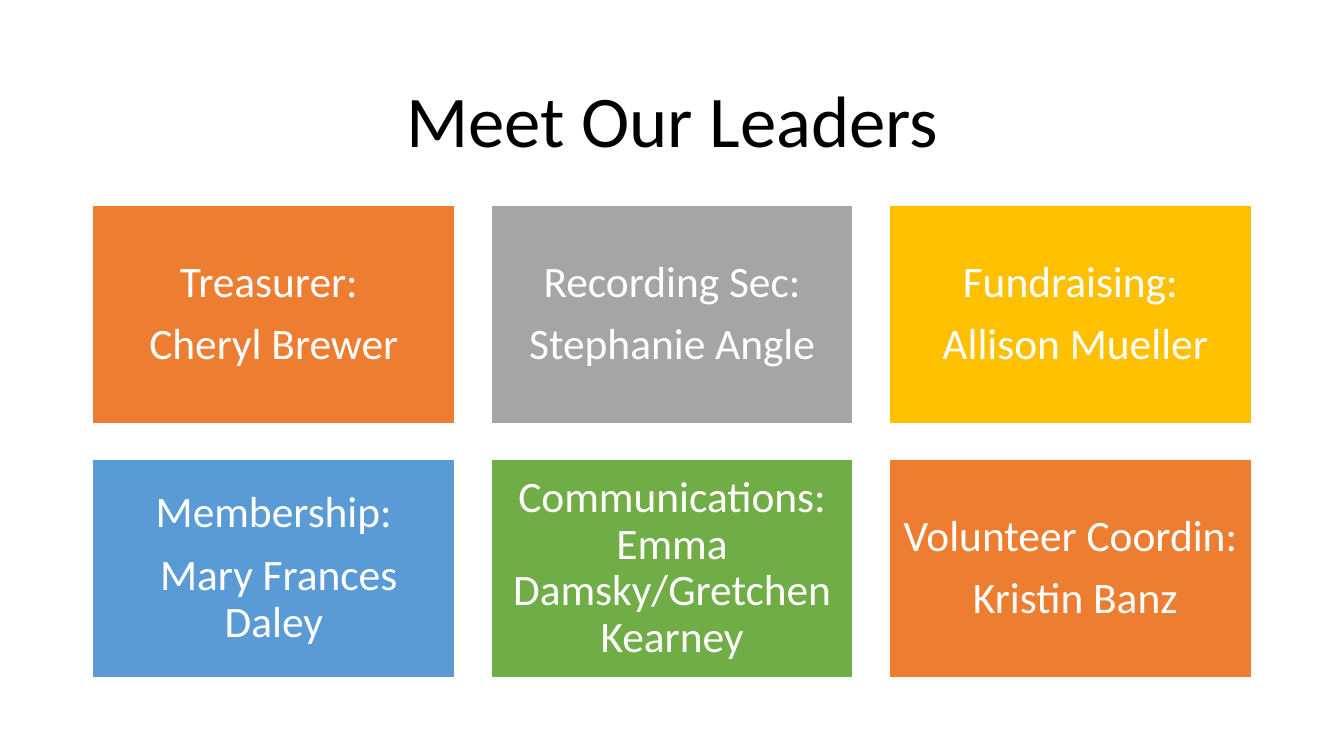
from pptx import Presentation
from pptx.dml.color import RGBColor
from pptx.enum.shapes import MSO_SHAPE
from pptx.enum.text import MSO_ANCHOR, PP_ALIGN
from pptx.util import Pt

RECTANGLE = MSO_SHAPE.RECTANGLE
MIDDLE = MSO_ANCHOR.MIDDLE
CENTER = PP_ALIGN.CENTER
EMU_PER_PX = 9144
TITLE_ONLY = 5

LEADERS = [
    ("ED7D31", ["Treasurer: ", "Cheryl Brewer"]),
    ("A5A5A5", ["Recording Sec:", "Stephanie Angle"]),
    ("FFC000", ["Fundraising:", " Allison Mueller"]),
    ("5B9BD5", ["Membership:", " Mary Frances Daley"]),
    ("70AD47", ["Communications: Emma Damsky/Gretchen Kearney"]),
    ("ED7D31", ["Volunteer Coordin:", " Kristin Banz"]),
]
COLUMNS = 3
CARD_WIDTH, CARD_HEIGHT, CARD_GAP = 359, 216, 36
GRID_LEFT, GRID_TOP = 92, 204


def px(length):
    return length * EMU_PER_PX


def color(value):
    return RGBColor.from_string(value)


class LeaderSlide:
    """Holds the style and the current slide, and adds its elements."""

    font = "Calibri"
    text_color = "FFFFFF"
    title_color = "000000"
    title_size = 52
    card_size = 31
    card_inset = 13
    card_spacing = 11

    def __init__(self, presentation):
        self.slide = presentation.slides.add_slide(presentation.slide_layouts[TITLE_ONLY])

    def fill_text(self, frame, lines, size, text_color, inset, spacing=0):
        frame.word_wrap = True
        frame.vertical_anchor = MIDDLE
        frame.margin_left = frame.margin_right = px(inset)
        frame.margin_top = frame.margin_bottom = px(inset)
        for index, line in enumerate(lines):
            paragraph = frame.add_paragraph() if index else frame.paragraphs[0]
            paragraph.alignment = CENTER
            paragraph.line_spacing = 0.9
            paragraph.space_before = Pt(0)
            paragraph.space_after = Pt(spacing)
            run = paragraph.add_run()
            run.text = line
            run.font.name = self.font
            run.font.size = Pt(size)
            run.font.color.rgb = color(text_color)

    def title(self, text, left, top, width, height):
        title = self.slide.shapes.title
        title.left, title.top = px(left), px(top)
        title.width, title.height = px(width), px(height)
        self.fill_text(title.text_frame, [text], self.title_size, self.title_color, 10)

    def card(self, lines, fill, left, top):
        shape = self.slide.shapes.add_shape(
            RECTANGLE, px(left), px(top), px(CARD_WIDTH), px(CARD_HEIGHT))
        shape.shadow.inherit = False
        shape.fill.solid()
        shape.fill.fore_color.rgb = color(fill)
        shape.line.color.rgb = color("FFFFFF")
        shape.line.width = Pt(1)
        self.fill_text(shape.text_frame, lines, self.card_size, self.text_color,
                       self.card_inset, self.card_spacing)


def main():
    presentation = Presentation()
    presentation.slide_width, presentation.slide_height = px(1333), px(750)
    leader_slide = LeaderSlide(presentation)
    leader_slide.title("Meet Our Leaders", 92, 61, 1150, 124)
    for index, (fill, lines) in enumerate(LEADERS):
        row, column = divmod(index, COLUMNS)
        leader_slide.card(lines, fill,
                          GRID_LEFT + column * (CARD_WIDTH + CARD_GAP),
                          GRID_TOP + row * (CARD_HEIGHT + CARD_GAP))
    presentation.save("out.pptx")


if __name__ == "__main__":
    main()
